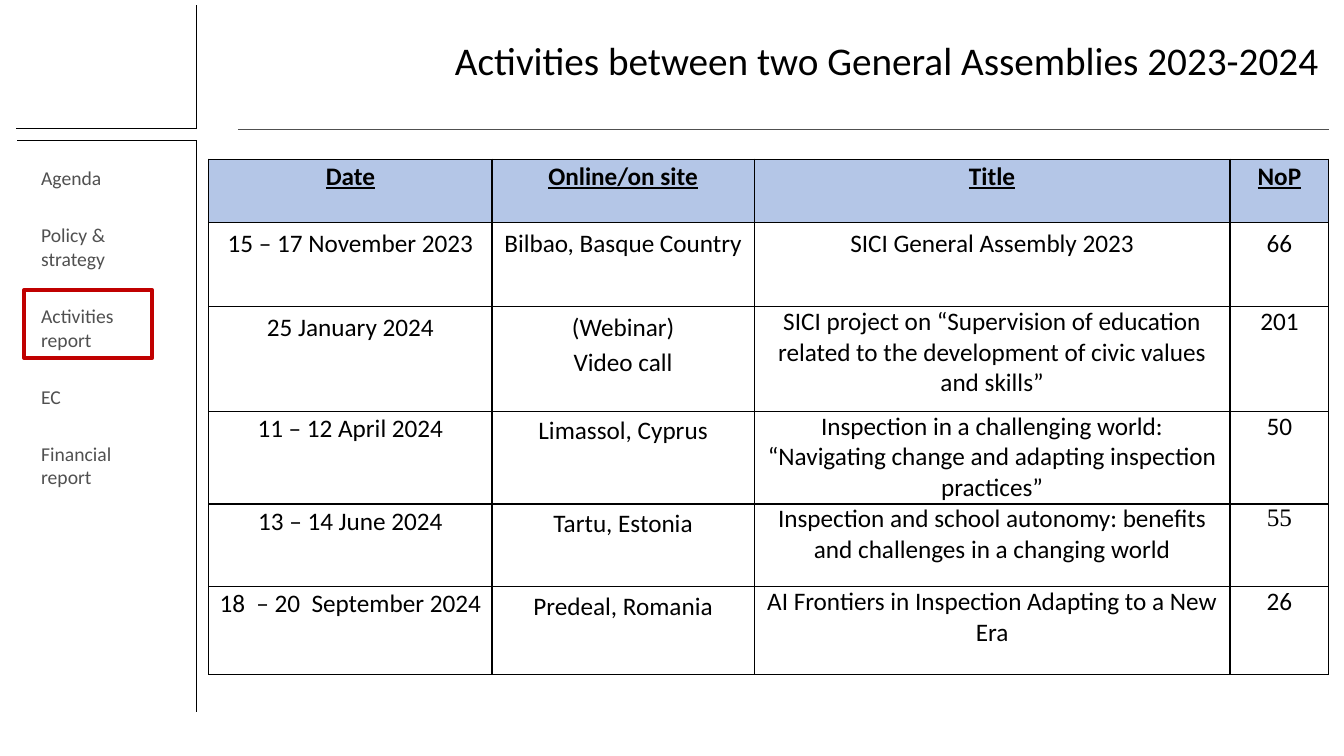
from lxml.etree import SubElement
from pptx import Presentation
from pptx.dml.color import RGBColor
from pptx.enum.shapes import MSO_CONNECTOR, MSO_SHAPE
from pptx.enum.text import MSO_ANCHOR, PP_ALIGN
from pptx.oxml.ns import qn
from pptx.util import Inches, Pt

TITLE = "Activities between two General Assemblies 2023-2024"
MENU = ["Agenda", "Policy & strategy", "Activities report", "EC", "Financial report"]
FRAME_LINES = [
    (1.95, 1.39, 1.95, 7.06, "000000"),
    (0.17, 1.39, 1.95, 1.39, "000000"),
    (0.16, 1.27, 1.95, 1.27, "000000"),
    (1.95, 0.05, 1.95, 1.28, "000000"),
    (2.36, 1.28, 13.18, 1.28, "505050"),
]
COL_WIDTHS = [2.81, 2.6, 4.72, 0.98]
ROW_HEIGHTS = [0.63, 0.83, 1.04, 0.92, 0.82, 0.87]
ROWS = [
    ["Date", "Online/on site", "Title", "NoP"],
    ["15 – 17 November 2023", "Bilbao, Basque Country", "SICI General Assembly 2023", "66"],
    ["25 January 2024", "(Webinar)\nVideo call",
     "SICI project on “Supervision of education related to the development of civic values and skills”", "201"],
    ["11 – 12 April 2024", "Limassol, Cyprus",
     "Inspection in a challenging world: “Navigating change and adapting inspection practices”", "50"],
    ["13 – 14 June 2024", "Tartu, Estonia",
     "Inspection and school autonomy: benefits and challenges in a changing world", "55"],
    ["18  – 20  September 2024", "Predeal, Romania",
     "AI Frontiers in Inspection Adapting to a New Era", "26"],
]
BODY_SPACING = [1.07, 1.15, 1.0, 1.0]
ROW_SPACING = {0: [1.07] * 4, 1: [1.15] * 4, 2: [1.15, 1.15, 1.0, 1.0]}
TIGHT_CELLS = {(1, 0), (1, 1), (1, 2), (1, 3), (2, 0), (2, 1)}
CELL_FONTS = {(4, 3): "Times New Roman"}


def color(value):
    return RGBColor.from_string(value)


def write(tf, text, size=18, font="Calibri", ink="000000", bold=False, underline=False,
          align=PP_ALIGN.LEFT, spacing=1.0, gap=0):
    for i, line in enumerate(text.split("\n")):
        p = tf.add_paragraph() if i else tf.paragraphs[0]
        p.alignment = align
        p.line_spacing = spacing
        p.space_before = Pt(gap if i else 0)
        p.space_after = Pt(gap)
        r = p.add_run()
        r.text = line
        r.font.size = Pt(size)
        r.font.name = font
        r.font.bold = bold
        r.font.underline = underline
        r.font.color.rgb = color(ink)


class SlideBuilder:
    """Holds the current slide and its shared style, and adds elements to it."""

    border = "000000"
    header_fill = "B4C6E7"
    accent = "C00000"

    def __init__(self, prs):
        self.s = prs.slides.add_slide(prs.slide_layouts[6])

    def line(self, x1, y1, x2, y2, ink):
        sp = self.s.shapes.add_connector(
            MSO_CONNECTOR.STRAIGHT, Inches(x1), Inches(y1), Inches(x2), Inches(y2))
        sp.line.color.rgb = color(ink)
        sp.line.width = Pt(0.5)
        SubElement(sp._element.spPr, qn("a:effectLst"))

    def text(self, x, y, w, h, text, anchor=MSO_ANCHOR.TOP, **style):
        sp = self.s.shapes.add_textbox(Inches(x), Inches(y), Inches(w), Inches(h))
        tf = sp.text_frame
        tf.word_wrap = True
        tf.vertical_anchor = anchor
        write(tf, text, **style)

    def frame(self, x, y, w, h):
        sp = self.s.shapes.add_shape(
            MSO_SHAPE.RECTANGLE, Inches(x), Inches(y), Inches(w), Inches(h))
        sp.shadow.inherit = False
        sp.fill.background()
        sp.line.color.rgb = color(self.accent)
        sp.line.width = Pt(3)

    def cell_borders(self, cell):
        tcPr = cell._tc.get_or_add_tcPr()
        for side in ("a:lnL", "a:lnR", "a:lnT", "a:lnB"):
            ln = SubElement(tcPr, qn(side), w=str(Pt(1)))
            SubElement(SubElement(ln, qn("a:solidFill")), qn("a:srgbClr"), val=self.border)

    def table(self, x, y):
        sp = self.s.shapes.add_table(
            len(ROWS), len(COL_WIDTHS), Inches(x), Inches(y),
            Inches(sum(COL_WIDTHS)), Inches(sum(ROW_HEIGHTS)))
        table = sp.table
        table.first_row = False
        table.horz_banding = False
        for col, width in zip(table.columns, COL_WIDTHS):
            col.width = Inches(width)
        for i, (row, height) in enumerate(zip(table.rows, ROW_HEIGHTS)):
            row.height = Inches(height)
            for j, cell in enumerate(row.cells):
                self.cell(cell, i, j)

    def cell(self, cell, i, j):
        header = i == 0
        tight = (i, j) in TIGHT_CELLS
        cell.margin_left = cell.margin_right = Inches(0.01 if tight else 0.07)
        cell.margin_top = Inches(0.01 if tight else 0)
        cell.margin_bottom = 0
        self.cell_borders(cell)
        if header:
            cell.fill.solid()
            cell.fill.fore_color.rgb = color(self.header_fill)
        else:
            cell.fill.background()
        write(cell.text_frame, ROWS[i][j], font=CELL_FONTS.get((i, j), "Calibri"),
              bold=header, underline=header, align=PP_ALIGN.CENTER,
              spacing=ROW_SPACING.get(i, BODY_SPACING)[j])


def main():
    prs = Presentation()
    prs.slide_width = Inches(13.33)
    prs.slide_height = Inches(7.5)
    slide = SlideBuilder(prs)
    for ends in FRAME_LINES:
        slide.line(*ends)
    slide.text(2.15, 0.01, 11.02, 1.22, TITLE, anchor=MSO_ANCHOR.MIDDLE,
               size=28, align=PP_ALIGN.RIGHT, spacing=0.9)
    slide.text(0.31, 1.6, 1.34, 3.9, "\n".join(MENU), size=14, ink="505050", gap=12)
    slide.frame(0.24, 2.88, 1.27, 0.67)
    slide.table(2.07, 1.58)
    prs.save("out.pptx")


if __name__ == "__main__":
    main()
